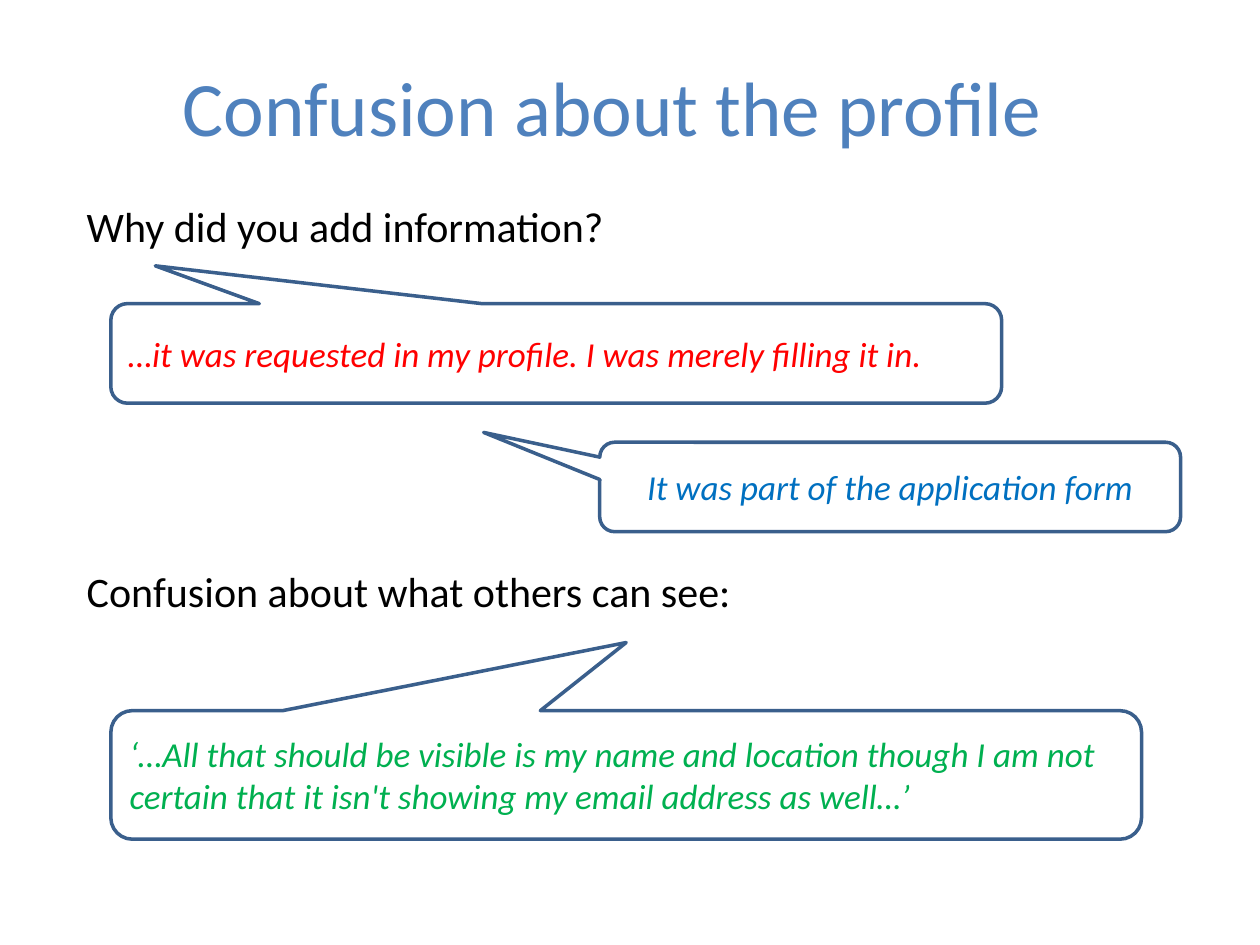
from pptx import Presentation
from pptx.dml.color import RGBColor
from pptx.enum.shapes import MSO_SHAPE
from pptx.enum.text import MSO_ANCHOR, PP_ALIGN
from pptx.util import Inches, Pt

TITLE = "Confusion about the profile "
# Question, space before in points
QUESTIONS = [
    ("Why did you add information?", 0),
    ("Confusion about what others can see:", 180),
]
# Quote, box (left, top, width, height), callout tip, colour, alignment
QUOTES = [
    ("It was part of the application form",
     (4.76, 3.51, 4.61, 0.71), (-0.7, -0.61), "0070C0", PP_ALIGN.CENTER),
    ("…it was requested in my profile. I was merely filling it in.",
     (0.88, 2.41, 7.07, 0.79), (-0.45, -0.88), "FF0000", PP_ALIGN.LEFT),
    ("‘…All that should be visible is my name and location though I am not "
     "certain that it isn't showing my email address as well…’",
     (0.88, 5.64, 8.18, 1.02), (0, -1.03), "00B050", PP_ALIGN.LEFT),
]


def rgb(value):
    return RGBColor.from_string(value)


def add_run(p, text, size, color, italic=False):
    r = p.add_run()
    r.text = text
    r.font.name = "Calibri"
    r.font.size = Pt(size)
    r.font.italic = italic
    r.font.color.rgb = rgb(color)


def add_text_box(s, box, anchor):
    tf = s.shapes.add_textbox(*map(Inches, box)).text_frame
    tf.word_wrap = True
    tf.vertical_anchor = anchor
    return tf


def add_quote(s, text, box, tip, color, align):
    sp = s.shapes.add_shape(MSO_SHAPE.ROUNDED_RECTANGULAR_CALLOUT, *map(Inches, box))
    sp.adjustments[0], sp.adjustments[1] = tip
    sp.shadow.inherit = False
    sp.fill.background()
    sp.line.color.rgb = rgb("3A5F8C")
    sp.line.width = Pt(2)
    tf = sp.text_frame
    tf.word_wrap = True
    tf.vertical_anchor = MSO_ANCHOR.MIDDLE
    p = tf.paragraphs[0]
    p.alignment = align
    add_run(p, text, 20, color, italic=True)


prs = Presentation()
prs.slide_width, prs.slide_height = Inches(10), Inches(7.5)
s = prs.slides.add_slide(prs.slide_layouts[6])

# Title
p = add_text_box(s, (0.43, 0.21, 9, 1.25), MSO_ANCHOR.MIDDLE).paragraphs[0]
p.alignment = PP_ALIGN.CENTER
add_run(p, TITLE, 44, "4F81BD")

# Questions
tf = add_text_box(s, (0.59, 1.54, 9, 4.95), MSO_ANCHOR.TOP)
for i, (text, gap) in enumerate(QUESTIONS):
    p = tf.add_paragraph() if i else tf.paragraphs[0]
    p.space_before = Pt(gap)
    add_run(p, text, 24, "000000")

# Quotes in callouts
for quote in QUOTES:
    add_quote(s, *quote)

prs.save("out.pptx")
